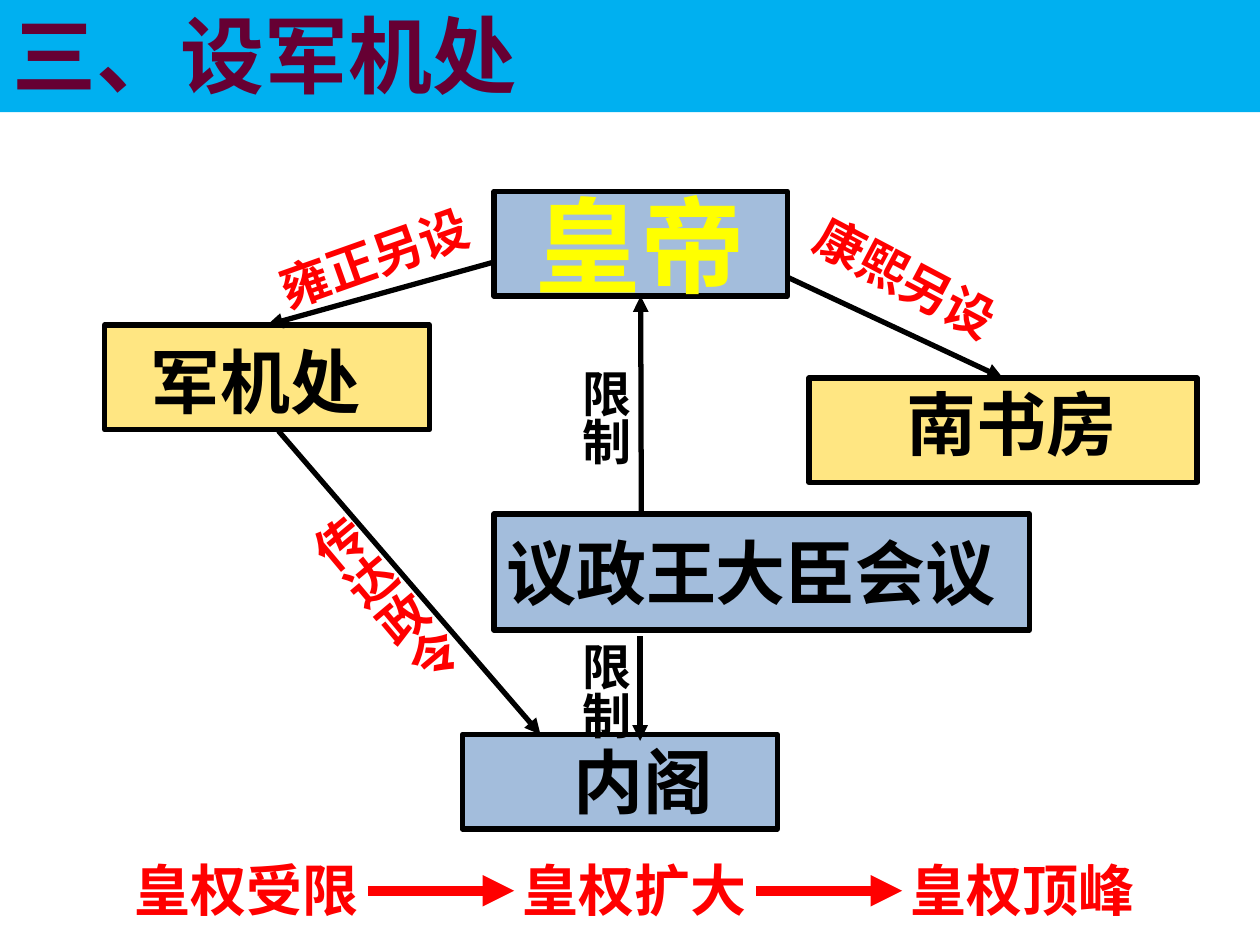
from dataclasses import dataclass

from lxml.etree import SubElement
from pptx import Presentation
from pptx.dml.color import RGBColor
from pptx.enum.shapes import MSO_CONNECTOR, MSO_SHAPE
from pptx.enum.text import MSO_ANCHOR, MSO_AUTO_SIZE, PP_ALIGN
from pptx.oxml.ns import qn
from pptx.util import Inches, Pt


@dataclass(frozen=True)
class Theme:
    """Colours, fonts and sizes of the slide."""
    bar: str = "00B0F0"
    head: str = "660033"
    blue: str = "4F81BD"
    gold: str = "FFCC00"
    ink: str = "000000"
    red: str = "FF0000"
    glow: str = "FFFF00"
    font: str = "Calibri"
    bold: str = "Arial"
    title: str = "Noto Sans CJK SC"
    note: int = 28
    step: int = 32
    name: int = 40
    top: int = 48
    king: int = 60


@dataclass(frozen=True)
class Box:
    """A region in inches, from which its parts are placed."""
    left: float
    top: float
    width: float
    height: float

    def point(self, x, y):
        """Return a slide point for an offset in the region."""
        return Inches(self.left + x), Inches(self.top + y)

    def area(self, x, y, width, height):
        """Return a slide area for an offset and size."""
        return *self.point(x, y), Inches(width), Inches(height)


THEME = Theme()


def write(frame, text, size=THEME.note, color=THEME.ink, font=THEME.font,
          align=PP_ALIGN.LEFT, anchor=MSO_ANCHOR.TOP, wrap=True, grow=True):
    """Put bold text with its format into a frame."""
    frame.word_wrap = wrap
    frame.vertical_anchor = anchor
    frame.auto_size = MSO_AUTO_SIZE.SHAPE_TO_FIT_TEXT if grow else MSO_AUTO_SIZE.NONE
    line = frame.paragraphs[0]
    line.alignment = align
    run = line.add_run()
    run.text = text
    run.font.size = Pt(size)
    run.font.bold = True
    run.font.name = font
    run.font.color.rgb = RGBColor.from_string(color)


def label(slide, area, text, turn=0, down=False, **look):
    """Add a text box, turned or set in a column on request."""
    item = slide.shapes.add_textbox(*area)
    write(item.text_frame, text, **look)
    item.rotation = turn
    if down:
        item.text_frame._txBody.bodyPr.set("vert", "eaVert")


def block(slide, area, color, alpha=None):
    """Add a rectangle; a see-through one gets a black border."""
    item = slide.shapes.add_shape(MSO_SHAPE.RECTANGLE, *area)
    item.shadow.inherit = False
    item.fill.solid()
    item.fill.fore_color.rgb = RGBColor.from_string(color)
    if alpha is None:
        item.line.fill.background()
    else:
        tint = next(item.element.spPr.iter(qn("a:srgbClr")))
        SubElement(tint, qn("a:alpha")).set("val", str(alpha * 1000))
        item.line.color.rgb = RGBColor.from_string(THEME.ink)
        item.line.width = Pt(3)
    return item


def arrow(slide, start, end, color=THEME.ink, width=3, join=None):
    """Draw an arrow, its head joined to a (shape, side) pair if given."""
    item = slide.shapes.add_connector(MSO_CONNECTOR.STRAIGHT, *start, *end)
    if join:
        item.end_connect(*join)
    item.line.color.rgb = RGBColor.from_string(color)
    item.line.width = Pt(width)
    SubElement(item.line._get_or_add_ln(), qn("a:tailEnd")).set("type", "triangle")
    SubElement(item.element.spPr, qn("a:effectLst"))


def banner(slide, box):
    """Fill the box with the title bar."""
    bar = block(slide, box.area(0, 0, box.width, box.height), THEME.bar)
    write(bar.text_frame, "三、设军机处", size=THEME.top, color=THEME.head,
          font=THEME.title)


def court(slide, box):
    """Lay out the offices, the arrows between them and their notes."""
    block(slide, box.area(3.09, 2.58, 4.25, 0.92), THEME.blue, 52)
    king = block(slide, box.area(3.09, 0.02, 2.33, 0.83), THEME.blue, 52)
    write(king.text_frame, "皇帝", size=THEME.king, color=THEME.glow,
          font=THEME.bold, align=PP_ALIGN.CENTER, anchor=MSO_ANCHOR.MIDDLE,
          wrap=False, grow=False)
    block(slide, box.area(2.84, 4.33, 2.5, 0.75), THEME.blue, 52)
    study = block(slide, box.area(5.59, 1.5, 3.08, 0.83), THEME.gold, 49)
    office = block(slide, box.area(0, 1.08, 2.58, 0.83), THEME.gold, 49)

    for start, end, join in (
        ((4.26, 2.58), (4.26, 0.85), (king, 2)),
        ((5.42, 0.7), (7.13, 1.5), (study, 0)),
        ((4.25, 3.55), (4.25, 4.38), None),
        ((1.38, 1.92), (3.46, 4.33), None),
        ((3.09, 0.58), (1.29, 1.08), (office, 0)),
    ):
        arrow(slide, box.point(*start), box.point(*end), join=join)

    for text, area, turn, down, color in (
        ("限制", (3.59, 1.33, 0.67, 1.3), 0, True, THEME.ink),
        ("限制", (3.59, 3.5, 0.67, 1.3), 0, True, THEME.ink),
        ("康熙另设", (5.42, 0.67, 2.83, 0.57), 27.8, False, THEME.red),
        ("传达政令", (2.34, 2.25, 0.67, 3.25), 320.1, True, THEME.red),
        ("雍正另设", (1.25, 0.17, 2.28, 0.57), 340.5, False, THEME.red),
    ):
        label(slide, box.area(*area), text, turn, down, color=color)

    for text, x, y, width in (
        ("军机处", 0.25, 1.14, 1.89),
        ("南书房", 6.25, 1.47, 1.89),
        ("议政王大臣会议", 3.06, 2.65, 4.14),
        ("内阁", 3.61, 4.31, 1.33),
    ):
        label(slide, box.area(x, y, width, 0.77), text, size=THEME.name,
              align=PP_ALIGN.CENTER, wrap=False)


def trend(slide, box):
    """Set the steps of imperial power in a row, with arrows between."""
    steps = ("皇权受限", "皇权扩大", "皇权顶峰")
    width = 2.27
    pitch = (box.width - width) / (len(steps) - 1)
    for place, text in enumerate(steps):
        x = place * pitch
        label(slide, box.area(x, 0, width, box.height), text, size=THEME.step,
              color=THEME.red, align=PP_ALIGN.CENTER)
        if place:
            arrow(slide, box.point(x - 0.98, 0.33), box.point(x + 0.18, 0.33),
                  color=THEME.red, width=6)


def main():
    """Build the slide and save it."""
    deck = Presentation()
    deck.slide_width, deck.slide_height = Inches(10), Inches(7.5)
    slide = deck.slides.add_slide(deck.slide_layouts[6])
    banner(slide, Box(0, -0.02, 10, 0.91))
    court(slide, Box(0.83, 1.5, 8.67, 5.08))
    trend(slide, Box(0.82, 6.74, 8.43, 0.63))
    deck.save("out.pptx")


if __name__ == "__main__":
    main()
